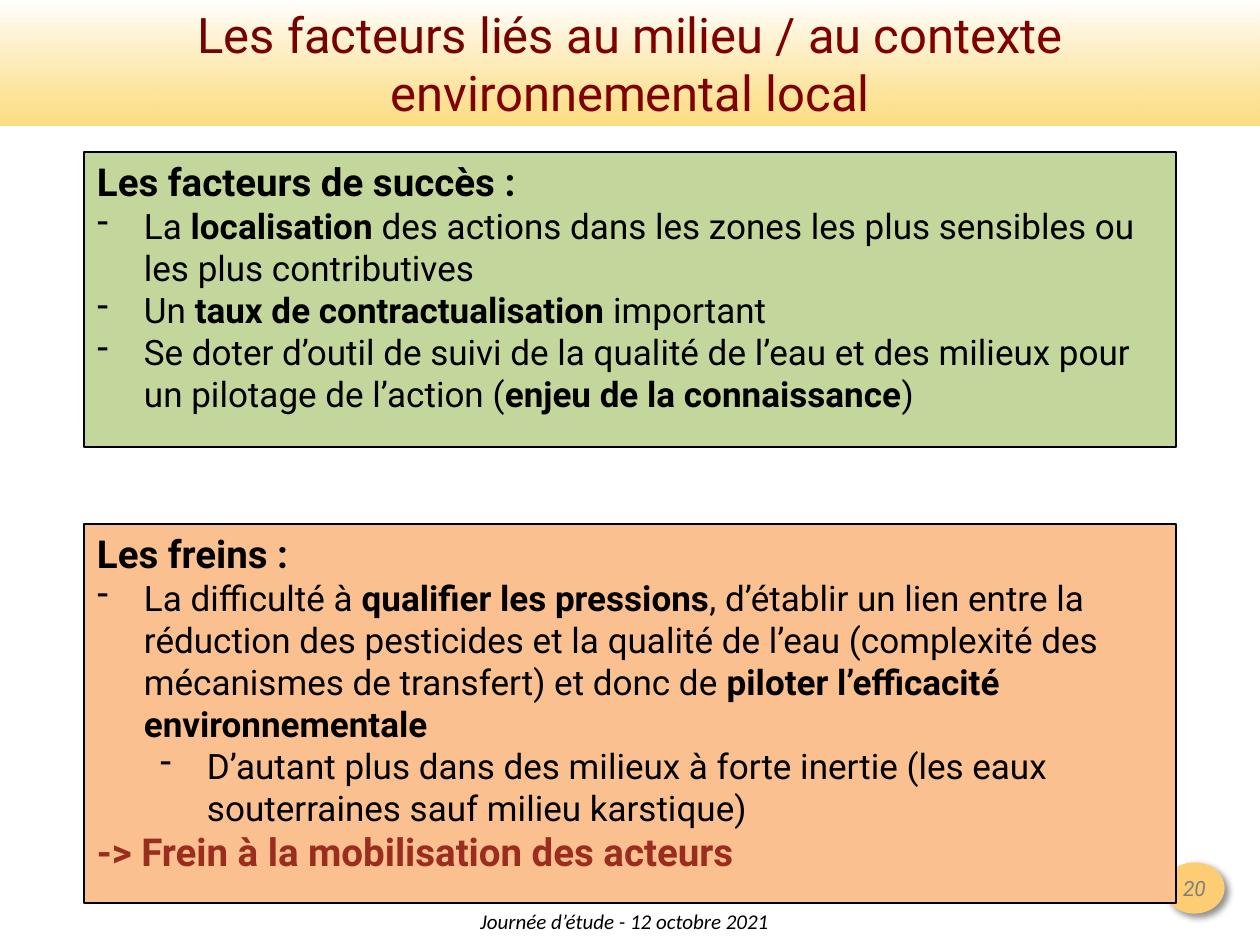
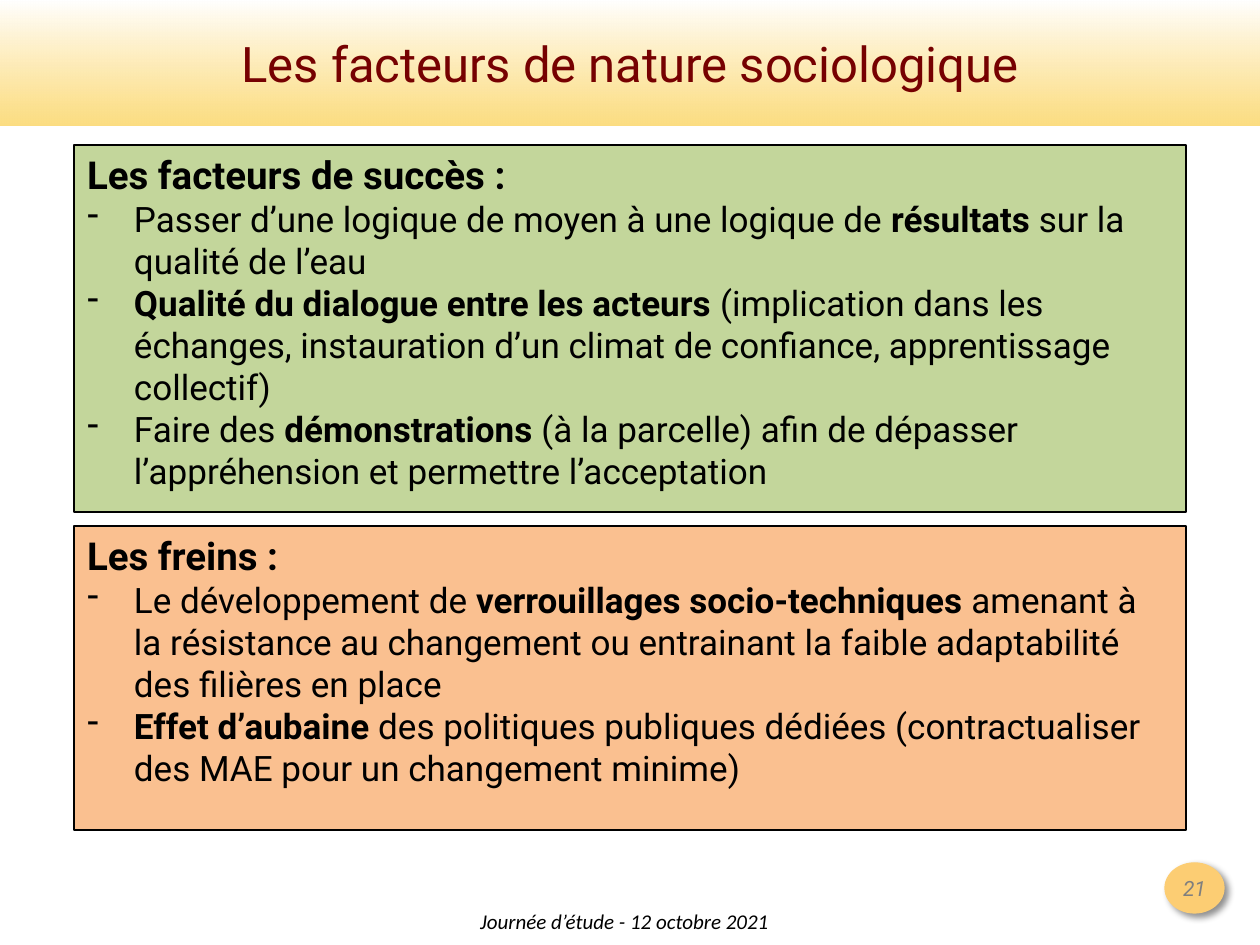
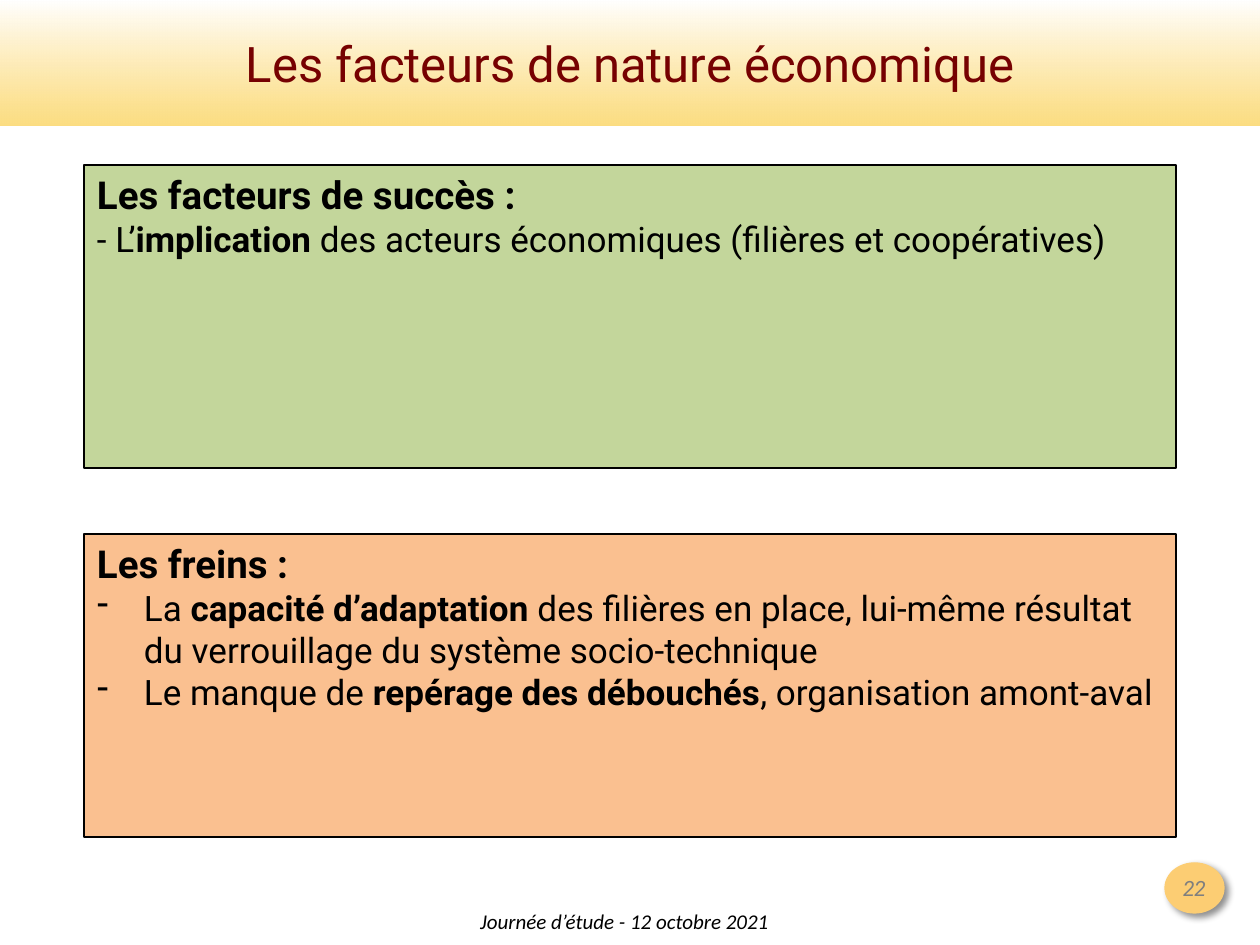
from dataclasses import dataclass

from pptx import Presentation
from pptx import util as u
from pptx.dml import color
from pptx.enum import shapes, text
from pptx.oxml import ns, xmlchemy


@dataclass(frozen=True)
class Theme:
    """Colours, fonts and type sizes shared by all slides."""
    title: str = "760101"
    title_alt: str = "800000"
    ink: str = "000000"
    accent: str = "9B2D1F"
    number: str = "7F7F7F"
    badge: str = "FCCD73"
    band_top: str = "FFFFFF"
    band_bottom: str = "FCD769"
    success: str = "C3D69B"
    brakes: str = "FAC090"
    font: str = "Roboto"
    footer_font: str = "Calibri"
    title_size: int = 28
    head_size: int = 22
    body_size: int = 20
    small_size: int = 12


T = Theme()
EMU_PER_PX = 914400 / 126
SLIDE_W, SLIDE_H = 1260, 945
BAND = (0, 0, SLIDE_W, 126)
BADGE = (1165, 863, 59, 50)
FOOTER = (262, 903, 725, 42)
HANG = 47          # hanging indent of a dash item
LEVEL_STEP = 63    # extra indent per level
INSET, INSET_Y = 13, 6


def px(n):
    return u.Emu(round(n * EMU_PER_PX))


def rgb(code):
    return color.RGBColor.from_string(code)


def set_all(target, values):
    for name, value in values.items():
        setattr(target, name, value)


def sub(parent, tag, **attrs):
    """Append a drawing element with the given attributes."""
    el = xmlchemy.OxmlElement(tag)
    for name, value in attrs.items():
        el.set(name, str(value))
    parent.append(el)
    return el


def add_run(p, words, size, ink=T.ink, font=T.font, **style):
    r = p.add_run()
    r.text = words
    set_all(r.font, {"name": font, "size": u.Pt(size), **style})
    r.font.color.rgb = rgb(ink)


def setup_text(shape, align, anchor, wrap=True, inset=(INSET, INSET_Y)):
    tf = shape.text_frame
    x, y = map(px, inset)
    set_all(tf, {"word_wrap": wrap, "vertical_anchor": anchor,
                 "margin_left": x, "margin_right": x,
                 "margin_top": y, "margin_bottom": y})
    tf.paragraphs[0].alignment = align
    return tf


def add_box(s, kind, box, fill=None, line=None):
    sp = s.shapes.add_shape(kind, *map(px, box))
    sp.shadow.inherit = False
    if fill:
        sp.fill.solid()
        sp.fill.fore_color.rgb = rgb(fill)
    if line:
        sp.line.color.rgb = rgb(line)
        sp.line.width = u.Pt(0.75)
    else:
        sp.line.fill.background()
    return sp


# Slide number in a shadowed disc
def add_badge(s, box, number):
    sp = add_box(s, shapes.MSO_SHAPE.OVAL, box, T.badge, T.badge)
    effects = sp._element.spPr.find(ns.qn("a:effectLst"))
    shadow = sub(effects, "a:outerShdw", blurRad=u.Pt(4), dist=u.Pt(3),
                 dir=45 * 60000, algn="tl", rotWithShape=0)
    sub(sub(shadow, "a:srgbClr", val="000000"), "a:alpha", val=43000)
    tf = setup_text(sp, text.PP_ALIGN.CENTER, text.MSO_ANCHOR.MIDDLE, False, (5, 5))
    add_run(tf.paragraphs[0], str(number), T.small_size, T.number, italic=True)


# Title on a gradient band
def add_title(s, box, parts):
    sp = add_box(s, shapes.MSO_SHAPE.RECTANGLE, box)
    sp.fill.gradient()
    sp.fill.gradient_angle = 270
    for stop, code, position in zip(sp.fill.gradient_stops,
                                    (T.band_top, T.band_bottom), (0, 1)):
        stop.color.rgb = rgb(code)
        stop.position = position
    bottom = list(sp._element.spPr.iter(ns.qn("a:srgbClr")))[-1]
    sub(bottom, "a:alpha", val=83000)
    tf = setup_text(sp, text.PP_ALIGN.CENTER, text.MSO_ANCHOR.MIDDLE)
    for words, ink in zip(parts, (T.title, T.title_alt)):
        add_run(tf.paragraphs[0], words, T.title_size, ink)


def add_footer(s, box):
    sp = s.shapes.add_textbox(*map(px, box))
    tf = setup_text(sp, text.PP_ALIGN.CENTER, text.MSO_ANCHOR.TOP)
    add_run(tf.paragraphs[0], "Journée d’étude - 12 octobre 2021", T.small_size,
            font=T.footer_font, italic=True)


def add_marked(p, marked):
    """Add runs; words between ** marks are bold."""
    for i, words in enumerate(marked.split("**")):
        if words:
            add_run(p, words, T.body_size, bold=i % 2 == 1)


def set_dash(p, level):
    p.level = level
    pPr = p._p.get_or_add_pPr()
    pPr.set("marL", str(px(HANG + level * LEVEL_STEP)))
    pPr.set("indent", str(-px(HANG)))
    sub(pPr, "a:buChar", char="-")


# Coloured panel: heading, items as (level, text), closing line.
# An item of level None has no hanging dash.
def add_panel(s, box, fill, heading, items, closing=None):
    sp = add_box(s, shapes.MSO_SHAPE.RECTANGLE, box, fill, T.ink)
    tf = setup_text(sp, text.PP_ALIGN.LEFT, text.MSO_ANCHOR.TOP)
    add_run(tf.paragraphs[0], heading, T.head_size, bold=True)
    for level, marked in items:
        p = tf.add_paragraph()
        p.alignment = text.PP_ALIGN.LEFT
        if level is not None:
            set_dash(p, level)
        add_marked(p, marked)
    if closing:
        p = tf.add_paragraph()
        p.alignment = text.PP_ALIGN.LEFT
        add_run(p, closing, T.head_size, T.accent, bold=True)


def add_factor_slide(prs, number, title, x, success, brakes):
    """Panels are centred; success and brakes give top, height and content."""
    s = prs.slides.add_slide(prs.slide_layouts[6])
    add_badge(s, BADGE, number)
    add_title(s, BAND, title)
    add_footer(s, FOOTER)
    for fill, heading, (top, height, *content) in (
            (T.success, "Les facteurs de succès :", success),
            (T.brakes, "Les freins :", brakes)):
        add_panel(s, (x, top, SLIDE_W - 2 * x, height), fill, heading, *content)


SLIDES = [
    dict(
        title=["Les facteurs liés ", "au milieu / au contexte environnemental local"],
        x=84,
        success=(152, 295, [
            (0, "La **localisation** des actions dans les zones les plus sensibles "
                "ou les plus contributives"),
            (0, "Un **taux de contractualisation** important"),
            (0, "Se doter d’outil de suivi de la qualité de l’eau et des milieux pour "
                "un pilotage de l’action (**enjeu de la connaissance**)"),
        ]),
        brakes=(524, 379, [
            (0, "La difficulté à **qualifier les pressions**, d’établir un lien entre la "
                "réduction des pesticides et la qualité de l’eau (complexité des "
                "mécanismes de transfert) et donc de "
                "**piloter l’efficacité environnementale**"),
            (1, "D’autant plus dans des milieux à forte inertie (les eaux "
                "souterraines sauf milieu karstique)"),
        ], "-> Frein à la mobilisation des acteurs"),
    ),
    dict(
        title=["Les facteurs de nature sociologique"],
        x=74,
        success=(145, 367, [
            (0, "Passer d’une logique de moyen à une logique de **résultats** sur la "
                "qualité de l’eau"),
            (0, "**Qualité du dialogue entre les acteurs** (implication dans les "
                "échanges, instauration d’un climat de confiance, apprentissage "
                "collectif)"),
            (0, "Faire des **démonstrations** (à la parcelle) afin de dépasser "
                "l’appréhension et permettre l’acceptation"),
        ]),
        brakes=(526, 304, [
            (0, "Le développement de **verrouillages socio-techniques** amenant à la "
                "résistance au changement ou entrainant la faible adaptabilité des "
                "filières en place"),
            (0, "**Effet d’aubaine** des politiques publiques dédiées (contractualiser "
                "des MAE pour un changement minime)"),
        ]),
    ),
    dict(
        title=["Les facteurs de nature économique"],
        x=84,
        success=(165, 303, [
            (None, "- L’**implication** des acteurs économiques (filières et "
                   "coopératives)"),
        ]),
        brakes=(534, 303, [
            (0, "La **capacité d’adaptation** des filières en place, lui-même résultat "
                "du verrouillage du système socio-technique"),
            (0, "Le manque de **repérage des débouchés**, organisation amont-aval"),
        ]),
    ),
]


def main():
    prs = Presentation()
    set_all(prs, {"slide_width": px(SLIDE_W), "slide_height": px(SLIDE_H)})
    for number, content in enumerate(SLIDES, start=20):
        add_factor_slide(prs, number, **content)
    prs.save("out.pptx")


if __name__ == "__main__":
    main()
